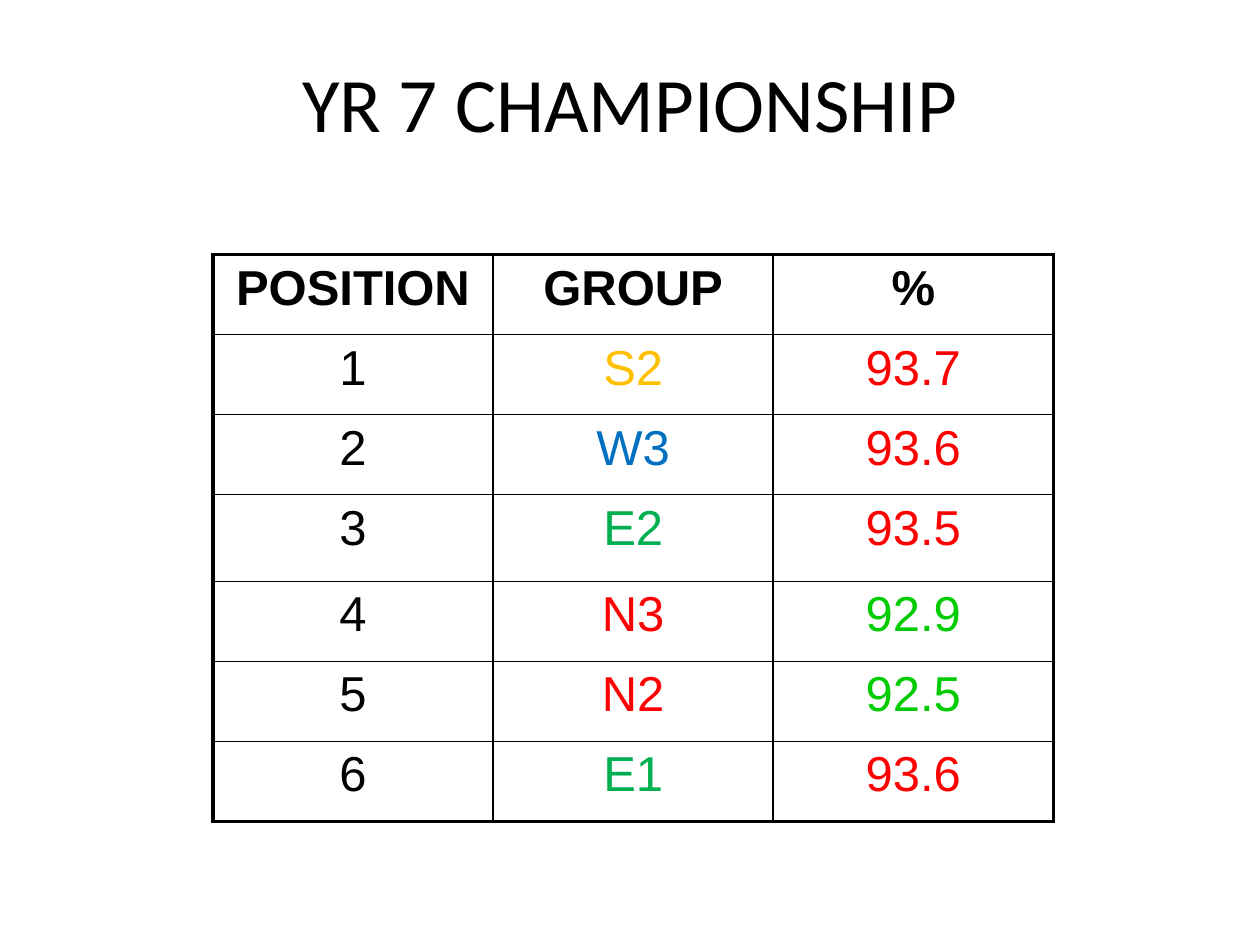
from dataclasses import dataclass

from lxml.etree import SubElement
from pptx import Presentation
from pptx.dml.color import RGBColor as RGB
from pptx.enum.text import MSO_ANCHOR as Anchor, PP_ALIGN as Align
from pptx.oxml.ns import qn
from pptx.util import Inches, Pt


@dataclass(frozen=True)
class Theme:
    ink: str = "000000"
    high: str = "FF0000"
    low: str = "00CC00"
    title_font: str = "Calibri"
    body_font: str = "Arial"
    title_size: int = 44
    body_size: int = 28
    outer_line: float = 2.25
    inner_line: float = 1


theme = Theme()
GROUP_COLORS = {"S": "FFC000", "W": "0070C0", "E": "00B050", "N": "FF0000"}


def write(tf, text, font=theme.body_font, size=theme.body_size,
          color=theme.ink, bold=False):
    p = tf.paragraphs[0]
    p.alignment = Align.CENTER
    r = p.add_run()
    r.text = text
    r.font.name = font
    r.font.size = Pt(size)
    r.font.bold = bold
    r.font.color.rgb = RGB.from_string(color)


def add_border(cell, side, width):
    ln = SubElement(cell._tc.get_or_add_tcPr(), qn(f"a:ln{side}"), w=str(Pt(width)))
    fill = SubElement(ln, qn("a:solidFill"))
    SubElement(fill, qn("a:srgbClr"), val=theme.ink)


# Slide
prs = Presentation()
prs.slide_width, prs.slide_height = Inches(10), Inches(7.5)
W, H = prs.slide_width, prs.slide_height
slide = prs.slides.add_slide(prs.slide_layouts[5])

# Title
title = slide.shapes.title
title.left, title.top = int(W * 0.075), 0
title.width, title.height = int(W * 0.85), Inches(1.61)
title.text_frame.vertical_anchor = Anchor.MIDDLE
write(title.text_frame, "YR 7 CHAMPIONSHIP",
      font=theme.title_font, size=theme.title_size)

# Standings: position, group and percentage
headers = ["POSITION", "GROUP", "%"]
standings = [("S2", 93.7), ("W3", 93.6), ("E2", 93.5),
             ("N3", 92.9), ("N2", 92.5), ("E1", 93.6)]
rows = [[(h, theme.ink) for h in headers]]
for position, (group, score) in enumerate(standings, 1):
    rows.append([(str(position), theme.ink),
                 (group, GROUP_COLORS[group[0]]),
                 (str(score), theme.high if score >= 93 else theme.low)])

# Table grid: equal columns, equal rows but for the slightly taller third place
n_rows, n_cols = len(rows), len(headers)
table_w, table_h = Inches(6.67), int(H * 0.6)
tall_row, tall_h = 3, Inches(0.69)
table = slide.shapes.add_table(n_rows, n_cols, Inches(1.69), Inches(2.02),
                               table_w, table_h).table
table.first_row = table.horz_banding = False
for col in table.columns:
    col.width = table_w // n_cols
for i, row in enumerate(table.rows):
    row.height = tall_h if i == tall_row else (table_h - tall_h) // (n_rows - 1)

# Cells: heavy frame outside, thin lines inside
for i, row in enumerate(rows):
    for j, (text, color) in enumerate(row):
        cell = table.cell(i, j)
        write(cell.text_frame, text, color=color, bold=i == 0)
        outer = {"L": j == 0, "R": j == n_cols - 1,
                 "T": i == 0, "B": i == n_rows - 1}
        for side, is_outer in outer.items():
            add_border(cell, side, theme.outer_line if is_outer else theme.inner_line)
        cell.fill.background()

prs.save("out.pptx")
